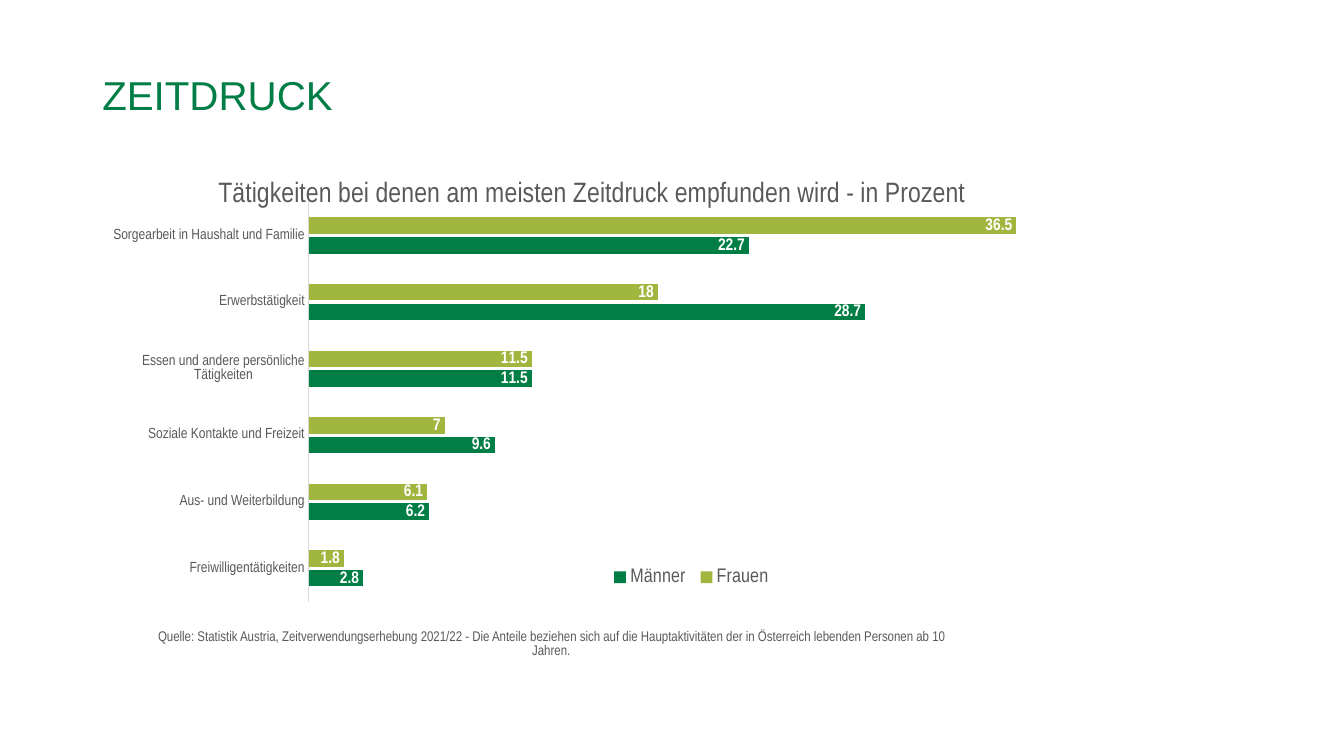
from pptx import Presentation
from pptx.chart.data import CategoryChartData
from pptx.dml.color import RGBColor
from pptx.enum.chart import (XL_CHART_TYPE, XL_LABEL_POSITION,
                             XL_LEGEND_POSITION, XL_TICK_MARK)
from pptx.enum.text import MSO_ANCHOR, PP_ALIGN
from pptx.oxml import parse_xml
from pptx.oxml.ns import nsdecls, qn
from pptx.util import Pt

BAR = XL_CHART_TYPE.BAR_CLUSTERED
INSIDE_END = XL_LABEL_POSITION.INSIDE_END
BOTTOM = XL_LEGEND_POSITION.BOTTOM
NO_TICK = XL_TICK_MARK.NONE
MIDDLE = MSO_ANCHOR.MIDDLE
LEFT, CENTER = PP_ALIGN.LEFT, PP_ALIGN.CENTER

PX = 9525  # EMU per px at 96 px to the inch
COLORS = {"green": "007E46", "lime": "A0B63E", "grey": "595959",
          "axis": "D9D9D9", "white": "FFFFFF"}
SANS, NARROW = "Arial", "Arial Narrow"

HEADING = "ZEITDRUCK"
CHART_TITLE = "Tätigkeiten bei denen am meisten Zeitdruck empfunden wird - in Prozent"
SOURCE = ("Quelle: Statistik Austria, Zeitverwendungserhebung 2021/22 - Die Anteile "
          "beziehen sich auf die Hauptaktivitäten der in Österreich lebenden "
          "Personen ab 10 Jahren.")
ACTIVITIES = ["Sorgearbeit in Haushalt und Familie", "Erwerbstätigkeit",
              "Essen und andere persönliche Tätigkeiten",
              "Soziale Kontakte und Freizeit", "Aus- und Weiterbildung",
              "Freiwilligentätigkeiten"]
SERIES = [("Frauen", "lime", (36.5, 18, 11.5, 7, 6.1, 1.8)),
          ("Männer", "green", (22.7, 28.7, 11.5, 9.6, 6.2, 2.8))]


def rgb(name):
    return RGBColor.from_string(COLORS[name])


def set_font(font, size, color, name=NARROW, bold=False):
    font.size = Pt(size)
    font.color.rgb = rgb(color)
    font.name = name
    font.bold = bold


def add_text(s, box, text, size, color, name, align, spacing):
    tf = s.shapes.add_textbox(*(v * PX for v in box)).text_frame
    tf.word_wrap = True
    tf.vertical_anchor = MIDDLE
    p = tf.paragraphs[0]
    p.alignment = align
    p.line_spacing = spacing
    r = p.add_run()
    r.text = text
    set_font(r.font, size, color, name)


def place(element, index, inner=False, **fractions):
    """Give a chart part a manual layout in fractions of the chart's size."""
    for old in element.findall(qn("c:layout")):
        element.remove(old)
    target = '<c:layoutTarget val="inner"/>' if inner else ""
    modes = '<c:xMode val="edge"/><c:yMode val="edge"/>'
    values = "".join(f'<c:{k} val="{v}"/>' for k, v in fractions.items())
    element.insert(index, parse_xml(
        f'<c:layout {nsdecls("c")}><c:manualLayout>{target}{modes}{values}'
        '</c:manualLayout></c:layout>'))


def style_axes(chart):
    cat = chart.category_axis
    cat.reverse_order = True
    cat.major_tick_mark = cat.minor_tick_mark = NO_TICK
    cat.format.line.color.rgb = rgb("axis")
    cat.format.line.width = Pt(0.75)
    set_font(cat.tick_labels.font, 10.5, "grey")
    val = chart.value_axis
    val.minimum_scale, val.maximum_scale = 0, 40
    val.has_major_gridlines = False
    val.visible = False


def style_bars(plot):
    plot.gap_width = 183
    plot.overlap = -20
    plot.vary_by_categories = False
    for series, (_, color, _) in zip(plot.series, SERIES):
        series.format.fill.solid()
        series.format.fill.fore_color.rgb = rgb(color)
        labels = series.data_labels
        labels.show_value = True
        labels.position = INSIDE_END
        set_font(labels.font, 12, "white", bold=True)


def add_bar_chart(s, box):
    data = CategoryChartData()
    data.categories = ACTIVITIES
    for name, _, values in SERIES:
        data.add_series(name, values)
    chart = s.shapes.add_chart(BAR, *(v * PX for v in box), data).chart
    set_font(chart.font, 10, "grey", SANS)

    title = chart.chart_title
    r = title.text_frame.paragraphs[0].add_run()
    r.text = CHART_TITLE
    set_font(r.font, 20, "grey")
    title.include_in_layout = False
    place(title._element, 1, x=0.12, y=0.04)

    chart.has_legend = True
    legend = chart.legend
    legend.position = BOTTOM
    legend.include_in_layout = False
    set_font(legend.font, 14, "grey")
    place(legend._element, 1, x=0.51, y=0.78, w=0.17, h=0.05)

    style_axes(chart)
    style_bars(chart.plots[0])
    place(chart._chartSpace.chart.plotArea, 0, inner=True,
          x=0.215, y=0.095, w=0.77, h=0.756)


def main():
    prs = Presentation()
    prs.slide_width, prs.slide_height = 1280 * PX, 720 * PX
    s = prs.slides.add_slide(prs.slide_layouts[6])
    add_text(s, (88, 69, 959, 47), HEADING, 28.8, "green", SANS, LEFT, 0.9)
    add_bar_chart(s, (88, 145, 959, 503))
    add_text(s, (140, 594, 770, 40), SOURCE, 10, "grey", NARROW, CENTER, 0.82)
    prs.save("out.pptx")


if __name__ == "__main__":
    main()
